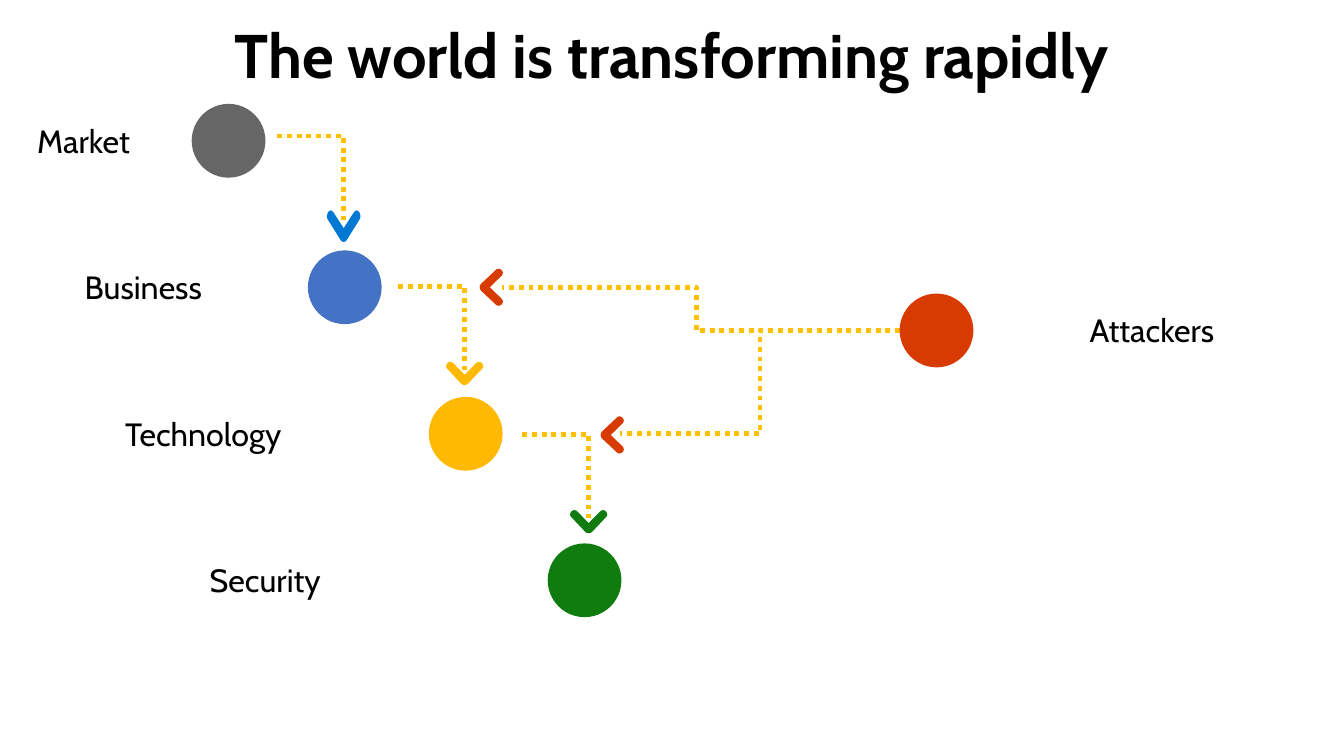
from lxml import etree
from pptx import Presentation
from pptx.dml.color import RGBColor
from pptx.enum import dml, shapes, text
from pptx.oxml import ns
from pptx.util import Pt

COLORS = {
    "black": "000000", "path": "FFC000", "market": "666666", "business": "4472C4",
    "technology": "FFB900", "security": "107C10", "attackers": "D83B01", "blue": "0078D4",
}
DISC = 52.7
LABEL_DROP = 12.2
STEP_WIDTH, STEP_HEIGHT = 47.5, 59.8
# Right half of a downward arrowhead, from its tip: (across, up)
HALF_HEAD = [(1.1, 0.1), (2.2, 0.7), (12.3, 11.4), (13.2, 12.6), (13.2, 14),
             (12.6, 15.3), (11.5, 16.2), (10.3, 16.5), (9.2, 16.3), (8.2, 15.6)]
HEAD_NOTCH = 7.2

presentation = Presentation()
presentation.slide_width, presentation.slide_height = Pt(960), Pt(540)
slide = presentation.slides.add_slide(presentation.slide_layouts[6])


def rgb(name):
    return RGBColor.from_string(COLORS[name])


def add_label(wording, left, top, width, height, inset, align, anchor, font_format):
    label = slide.shapes.add_textbox(Pt(left), Pt(top), Pt(width), Pt(height))
    frame = label.text_frame
    frame.word_wrap = True
    frame.vertical_anchor = anchor
    if not inset:
        for side in ("left", "top", "right", "bottom"):
            setattr(frame, f"margin_{side}", 0)
    paragraph = frame.paragraphs[0]
    paragraph.alignment = align
    run = paragraph.add_run()
    run.text = wording
    for attribute, value in font_format.items():
        setattr(run.font, attribute, value)
    run.font.color.rgb = rgb("black")


add_label("The world is transforming rapidly", 66, 0.7, 828, 75.6, True,
          text.PP_ALIGN.CENTER, text.MSO_ANCHOR.MIDDLE,
          {"name": "Cabin", "size": Pt(44), "bold": True})

# Dotted paths: start x, start y, end x, end y, preset
steps = [(198, 97.2), (284.4, 204.5), (373, 310.3)]
paths = [(x, y, x + STEP_WIDTH, y + STEP_HEIGHT, "bentConnector2") for x, y in steps]
paths += [(636, 236.2, 358.6, 205.2, "bentConnector3"),
          (643, 236.2, 442.8, 309.6, "bentConnector3")]
for start_x, start_y, end_x, end_y, preset in paths:
    route = slide.shapes.add_connector(shapes.MSO_CONNECTOR.ELBOW, Pt(start_x), Pt(start_y),
                                       Pt(end_x), Pt(end_y))
    route.line.color.rgb = rgb("path")
    route.line.width = Pt(3.5)
    route.line.dash_style = dml.MSO_LINE.ROUND_DOT
    properties = route._element.spPr
    properties.find(ns.qn("a:prstGeom")).set("prst", preset)
    etree.SubElement(properties, ns.qn("a:effectLst"))

# Arrowheads: tip x, tip y, direction, colour, stretch across, stretch along
arrowheads = [
    (245.5, 172.8, "down", "blue", 0.9, 1.36),
    (331.9, 275, "down", "technology", 1, 1),
    (420.5, 380.9, "down", "security", 1, 1),
    (342.7, 205.2, "left", "attackers", 1, 1),
    (429.1, 310.7, "left", "attackers", 1, 1),
]
mirrored = [(-across, up) for across, up in reversed(HALF_HEAD)]
outline = [(0, 0), *HALF_HEAD, (0, HEAD_NOTCH), *mirrored]
for tip_x, tip_y, direction, color, wide, tall in arrowheads:
    points = []
    for across, up in outline:
        across, up = across * wide, up * tall
        x, y = (tip_x + across, tip_y - up) if direction == "down" else (tip_x + up, tip_y + across)
        points.append((x * 100, y * 100))
    builder = slide.shapes.build_freeform(*points[0], scale=Pt(1) / 100)
    builder.add_line_segments(points[1:], close=True)
    head = builder.convert_to_shape()
    head.shadow.inherit = False
    head.fill.solid()
    head.fill.fore_color.rgb = rgb(color)
    head.line.fill.background()

# Topics: wording, disc left, disc top, label left, label width
row_tops = [74.2 + 104.65 * row for row in range(4)]
topics = [
    ("Market", 136.9, row_tops[0], 26.6, 74.9),
    ("Business", 219.9, row_tops[1], 60.5, 89.3),
    ("Technology", 306.3, row_tops[2], 89.3, 121),
    ("Security", 391.2, row_tops[3], 149.8, 84.2),
    ("Attackers", 642.6, 209.7, 778.3, 97.9),
]
for wording, disc_left, top, label_left, label_width in topics:
    disc = slide.shapes.add_shape(shapes.MSO_SHAPE.OVAL, Pt(disc_left), Pt(top),
                                  Pt(DISC), Pt(DISC))
    disc.shadow.inherit = False
    disc.fill.solid()
    disc.fill.fore_color.rgb = rgb(wording.lower())
    disc.line.fill.background()
    add_label(wording, label_left, top + LABEL_DROP, label_width, 28, False,
              text.PP_ALIGN.LEFT, text.MSO_ANCHOR.TOP, {"name": "Cabin", "size": Pt(23)})

presentation.save("out.pptx")
